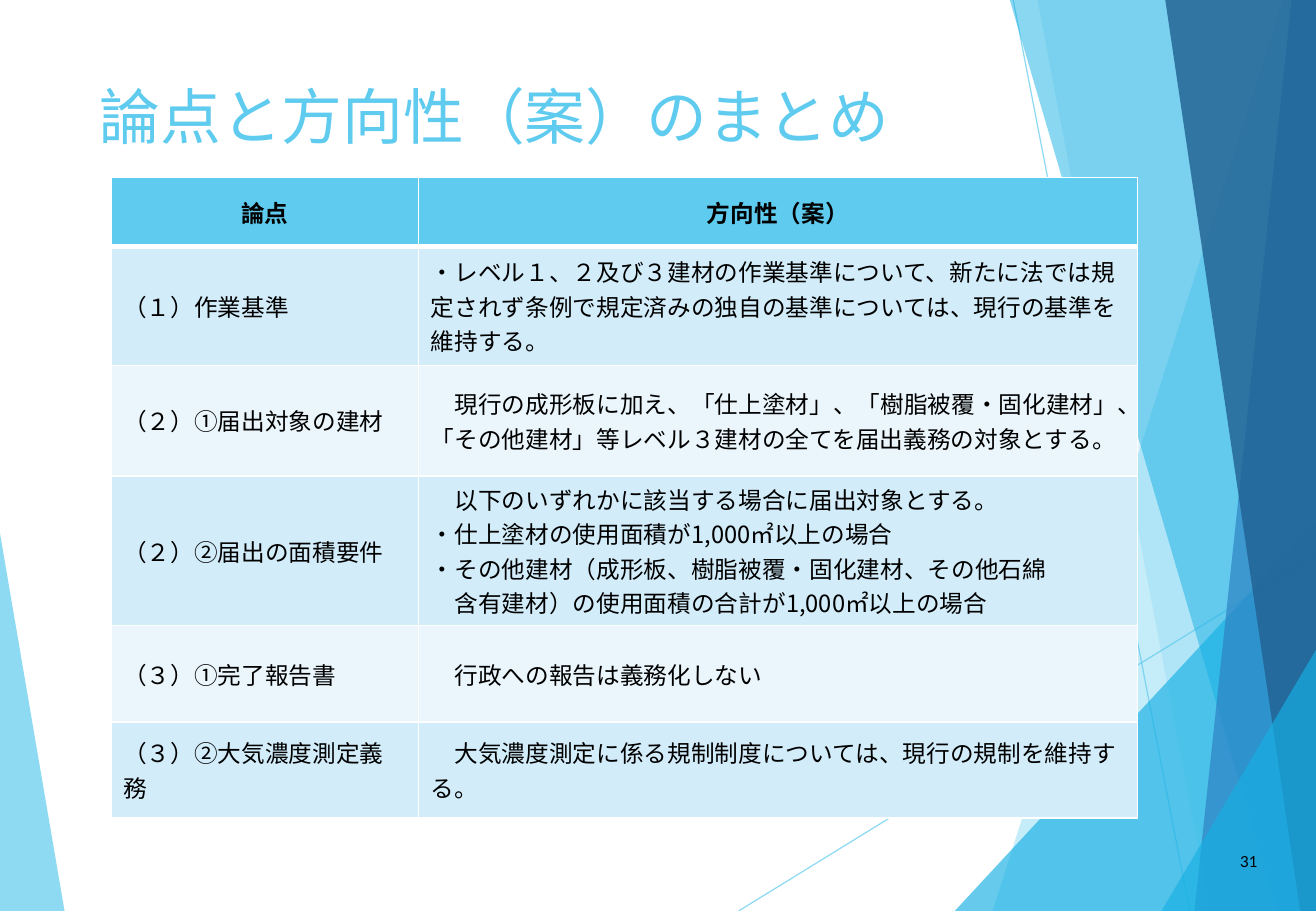
from dataclasses import dataclass

from lxml import etree
from pptx import Presentation, util as u
from pptx.dml import color
from pptx.enum import shapes, text
from pptx.oxml import ns


@dataclass(frozen=True)
class Theme:
    sky: str = "5FCBEF"
    cyan: str = "17B0E4"
    blue: str = "2E83C3"
    navy: str = "226292"
    white: str = "FFFFFF"
    black: str = "000000"
    bands: tuple = ("D2ECF9", "EAF6FC")
    latin: str = "Lato"
    japanese: str = "Noto Sans CJK JP"
    title_size: int = 36
    table_size: int = 14
    number_size: int = 9


THEME = Theme()
WIDTH, HEIGHT = 27.51, 19.05  # centimetres

HEADINGS = ["論点", "方向性（案）"]
ISSUES = [
    ("（１）作業基準",
     ["・レベル１、２及び３建材の作業基準について、新たに法では規定されず"
      "条例で規定済みの独自の基準については、現行の基準を維持する。"]),
    ("（２）①届出対象の建材",
     ["　現行の成形板に加え、「仕上塗材」、「樹脂被覆・固化建材」、"
      "「その他建材」等レベル３建材の全てを届出義務の対象とする。"]),
    ("（２）②届出の面積要件",
     ["　以下のいずれかに該当する場合に届出対象とする。",
      "・仕上塗材の使用面積が1,000㎡以上の場合",
      "・その他建材（成形板、樹脂被覆・固化建材、その他石綿",
      "　含有建材）の使用面積の合計が1,000㎡以上の場合"]),
    ("（３）①完了報告書", ["　行政への報告は義務化しない"]),
    ("（３）②大気濃度測定義務",
     ["　大気濃度測定に係る規制制度については、現行の規制を維持する。"]),
]
COLUMN_WIDTHS = [6.43, 15.03]
ROW_HEIGHTS = [1.44, 2.49, 2.31, 3.0, 2.01, 2.01]


def rgb(value):
    return color.RGBColor.from_string(value)


def set_opacity(element, percent):
    for solid in element.iter(ns.qn("a:srgbClr")):
        etree.SubElement(solid, ns.qn("a:alpha"), val=str(percent * 1000))


def write_text(frame, lines, *, size, font, colour=THEME.black, bold=False,
               align=text.PP_ALIGN.LEFT, anchor=text.MSO_ANCHOR.MIDDLE, spacing=1.0):
    frame.word_wrap = True
    frame.vertical_anchor = anchor
    for index, line in enumerate(lines):
        para = frame.add_paragraph() if index else frame.paragraphs[0]
        para.alignment, para.line_spacing = align, spacing
        span = para.add_run()
        span.text = line
        span.font.size, span.font.bold = u.Pt(size), bold
        span.font.color.rgb = rgb(colour)
        span.font.name = font
        etree.SubElement(span.font._element, ns.qn("a:ea"), typeface=THEME.japanese)


def add_polygon(page, points, colour, opacity):
    corners = [(u.Cm(x), u.Cm(y)) for x, y in points]
    builder = page.shapes.build_freeform(*corners[0])
    builder.add_line_segments(corners[1:], close=True)
    shape = builder.convert_to_shape()
    shape.shadow.inherit = False
    shape.fill.solid()
    shape.fill.fore_color.rgb = rgb(colour)
    shape.line.fill.background()
    set_opacity(shape._element.spPr, opacity)


def add_band(page, top_x, bottom_x, colour, opacity):
    """Fill from a slanted left edge to the right edge of the page."""
    add_polygon(page, [(top_x, 0), (bottom_x, HEIGHT), (WIDTH, HEIGHT), (WIDTH, 0)],
                colour, opacity)


def add_corner(page, bottom_x, right_y, colour, opacity):
    """Fill a triangle in the bottom right corner of the page."""
    add_polygon(page, [(bottom_x, HEIGHT), (WIDTH, right_y), (WIDTH, HEIGHT)],
                colour, opacity)


def add_thin_line(page, *ends):
    line = page.shapes.add_connector(shapes.MSO_CONNECTOR.STRAIGHT, *map(u.Cm, ends))
    line.line.width = u.Pt(0.75)
    line.line.color.rgb = rgb(THEME.sky)
    properties = line._element.spPr
    set_opacity(properties, 70)
    etree.SubElement(properties, ns.qn("a:effectLst"))


def add_background(page):
    add_polygon(page, [(0, 11.15), (1.35, HEIGHT), (0, HEIGHT)], THEME.sky, 70)
    add_thin_line(page, 15.44, HEIGHT, WIDTH, 11.61)
    add_thin_line(page, 21.18, 0, 24.87, HEIGHT)
    add_band(page, 26.82, 20.75, THEME.sky, 36)
    add_band(page, 21.69, 25.3, THEME.sky, 20)
    add_corner(page, 19.96, 10.9, THEME.cyan, 66)
    add_band(page, 21.11, 26.7, THEME.cyan, 50)
    add_band(page, 27, 24.97, THEME.blue, 70)
    add_band(page, 24.36, 27.18, THEME.navy, 82)
    add_corner(page, 24.28, 13.59, THEME.cyan, 66)


def set_borders(cell, top, bottom):
    properties = cell._tc.get_or_add_tcPr()
    for side, width in (("L", 1), ("R", 1), ("T", top), ("B", bottom)):
        line = etree.SubElement(properties, ns.qn(f"a:ln{side}"), w=str(u.Pt(width)))
        fill = etree.SubElement(line, ns.qn("a:solidFill"))
        etree.SubElement(fill, ns.qn("a:srgbClr"), val=THEME.white)


def fill_cell(cell, row, lines):
    header = row == 0
    set_borders(cell, top=3 if row == 1 else 1, bottom=3 if header else 1)
    cell.fill.solid()
    cell.fill.fore_color.rgb = rgb(THEME.sky if header else THEME.bands[(row - 1) % 2])
    write_text(cell.text_frame, lines, size=THEME.table_size, font=THEME.japanese,
               bold=header,
               align=text.PP_ALIGN.CENTER if header else text.PP_ALIGN.LEFT)
    cell.vertical_anchor = text.MSO_ANCHOR.MIDDLE


def add_issue_table(page):
    rows = [[[heading] for heading in HEADINGS]]
    rows += [[[issue], direction] for issue, direction in ISSUES]
    table = page.shapes.add_table(
        len(rows), len(HEADINGS), u.Cm(2.32), u.Cm(3.71),
        u.Cm(sum(COLUMN_WIDTHS)), u.Cm(sum(ROW_HEIGHTS))).table
    for column, width in zip(table.columns, COLUMN_WIDTHS):
        column.width = u.Cm(width)
    for index, (row, height) in enumerate(zip(rows, ROW_HEIGHTS)):
        table.rows[index].height = u.Cm(height)
        for column, lines in enumerate(row):
            fill_cell(table.cell(index, column), index, lines)


def set_title(page):
    title = page.shapes.title
    title.left, title.top = u.Cm(1.83), u.Cm(1.7)
    title.width, title.height = u.Cm(19.1), u.Cm(2.11)
    write_text(title.text_frame, ["論点と方向性（案）のまとめ"], size=THEME.title_size,
               font=THEME.latin, colour=THEME.sky, anchor=text.MSO_ANCHOR.TOP,
               spacing=0.9)


def add_page_number(page):
    box = page.shapes.add_textbox(u.Cm(24.99), u.Cm(17.5), u.Cm(1.55), u.Cm(1.02))
    write_text(box.text_frame, ["31"], size=THEME.number_size, font=THEME.latin,
               align=text.PP_ALIGN.RIGHT)


def main():
    deck = Presentation()
    deck.slide_width, deck.slide_height = u.Cm(WIDTH), u.Cm(HEIGHT)
    page = deck.slides.add_slide(deck.slide_layouts.get_by_name("Title Only"))
    add_background(page)
    set_title(page)
    add_issue_table(page)
    add_page_number(page)
    deck.save("out.pptx")


if __name__ == "__main__":
    main()
